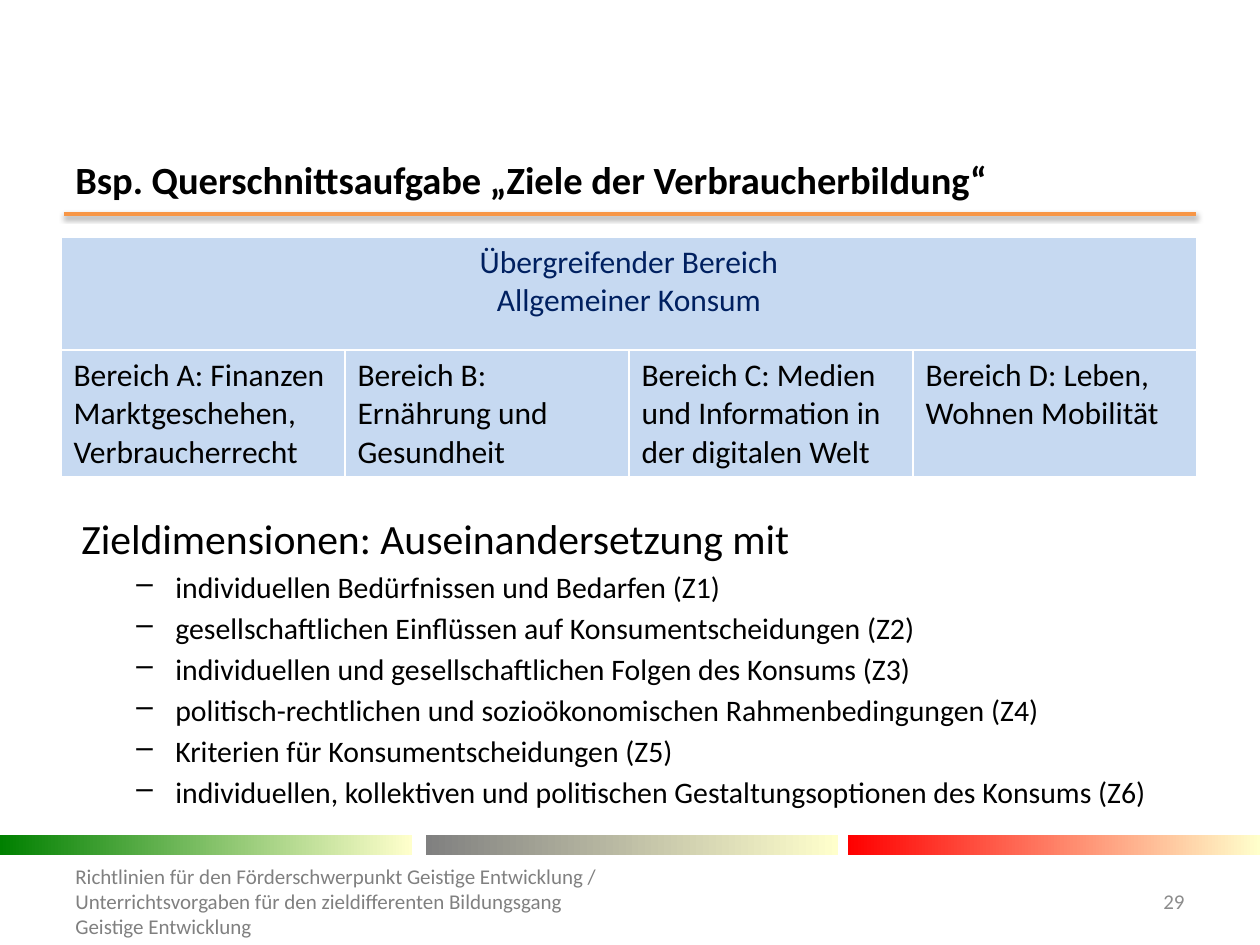
"""Build the slide on the goals of consumer education."""
from lxml.etree import SubElement
from pptx import Presentation
from pptx.dml.color import RGBColor
from pptx.enum.shapes import MSO_CONNECTOR, MSO_SHAPE
from pptx.enum.text import MSO_ANCHOR, PP_ALIGN
from pptx.oxml import parse_xml
from pptx.oxml.ns import nsdecls, qn
from pptx.util import Emu, Pt

SCALE = 914400 / 126
COLORS = {
    "text": "000000", "navy": "002060", "cell": "C6D9F1", "rule": "F79646",
    "footer": "808080", "number": "8C8C8C", "white": "FFFFFF",
    "green": "008000", "gray": "808080", "red": "FF0000", "cream": "FFFFCC",
}


def px(*lengths):
    return [Emu(round(length * SCALE)) for length in lengths]


def write(para, text, size, color, bold=False):
    span = para.add_run()
    span.text = text
    span.font.name = "Calibri"
    span.font.size = Pt(size)
    span.font.bold = bold
    span.font.color.rgb = RGBColor.from_string(COLORS[color])


deck = Presentation()
deck.slide_width, deck.slide_height = px(1260, 945)
page = deck.slides.add_slide(deck.slide_layouts[6])

rule = page.shapes.add_connector(MSO_CONNECTOR.STRAIGHT, *px(64, 214, 1196, 214))
rule.line.color.rgb = RGBColor.from_string(COLORS["rule"])
rule.line.width = Pt(2)
rule._element.spPr.append(parse_xml(
    f'<a:effectLst {nsdecls("a")}>'
    '<a:outerShdw blurRad="40000" dist="20000" dir="5400000" rotWithShape="0">'
    '<a:srgbClr val="000000"><a:alpha val="38000"/></a:srgbClr>'
    '</a:outerShdw></a:effectLst>'))

for left, color in [(0, "green"), (426, "gray"), (848, "red")]:
    bar = page.shapes.add_shape(MSO_SHAPE.RECTANGLE, *px(left, 835, 412, 20))
    bar.shadow.inherit = False
    bar.line.fill.background()
    bar.fill.gradient()
    bar.fill.gradient_angle = 0
    for stop, name in zip(bar.fill.gradient_stops, [color, "cream"]):
        stop.color.rgb = RGBColor.from_string(COLORS[name])

labels = [
    ((63, 155, 1134, 49), "Bsp. Querschnittsaufgabe „Ziele der Verbraucherbildung“",
     22, "text", True, PP_ALIGN.LEFT),
    ((63, 876, 577, 50), "Richtlinien für den Förderschwerpunkt Geistige Entwicklung / "
     "Unterrichtsvorgaben für den zieldifferenten Bildungsgang Geistige Entwicklung",
     12, "footer", False, PP_ALIGN.LEFT),
    ((1116, 876, 81, 50), "29", 12, "number", False, PP_ALIGN.RIGHT),
]
for place, text, size, color, bold, align in labels:
    box = page.shapes.add_textbox(*px(*place))
    box.text_frame.word_wrap = True
    box.text_frame.vertical_anchor = MSO_ANCHOR.MIDDLE
    para = box.text_frame.paragraphs[0]
    para.alignment = align
    write(para, text, size, color, bold)

goals = [
    "individuellen Bedürfnissen und Bedarfen (Z1)",
    "gesellschaftlichen Einflüssen auf Konsumentscheidungen (Z2)",
    "individuellen und gesellschaftlichen Folgen des Konsums (Z3)",
    "politisch-rechtlichen und sozioökonomischen Rahmenbedingungen (Z4)",
    "Kriterien für Konsumentscheidungen (Z5)",
    "individuellen, kollektiven und politischen Gestaltungsoptionen des Konsums (Z6)",
]
body = page.shapes.add_textbox(*px(61, 507, 1134, 324))
body.fill.solid()
body.fill.fore_color.rgb = RGBColor.from_string(COLORS["white"])
body.text_frame.word_wrap = True
para = body.text_frame.paragraphs[0]
para._p.get_or_add_pPr().set("marL", str(px(8)[0]))
write(para, "Zieldimensionen: Auseinandersetzung mit", 23.8, "text")
margin, hanging = px(102, -39)
for goal in goals:
    para = body.text_frame.add_paragraph()
    para.level = 1
    properties = para._p.get_or_add_pPr()
    properties.set("marL", str(margin))
    properties.set("indent", str(hanging))
    SubElement(properties, qn("a:buChar")).set("char", "–")
    para.space_before = Pt(3)
    write(para, goal, 17, "text")

areas = [
    "Bereich A: Finanzen Marktgeschehen, Verbraucherrecht",
    "Bereich B: Ernährung und Gesundheit",
    "Bereich C: Medien und Information in der digitalen Welt",
    "Bereich D: Leben, Wohnen Mobilität",
]
table = page.shapes.add_table(2, 4, *px(61, 237, 1136, 240)).table
for row, height in zip(table.rows, px(113, 127)):
    row.height = height
for cell in table.iter_cells():
    cell.fill.solid()
    cell.fill.fore_color.rgb = RGBColor.from_string(COLORS["cell"])
header = table.cell(0, 0)
header.merge(table.cell(0, 3))
header.text_frame.add_paragraph()
for para, text in zip(header.text_frame.paragraphs,
                      ["Übergreifender Bereich", "Allgemeiner Konsum"]):
    para.alignment = PP_ALIGN.CENTER
    write(para, text, 18, "navy")
for column, area in enumerate(areas):
    write(table.cell(1, column).text_frame.paragraphs[0], area, 18, "text")

deck.save("out.pptx")
